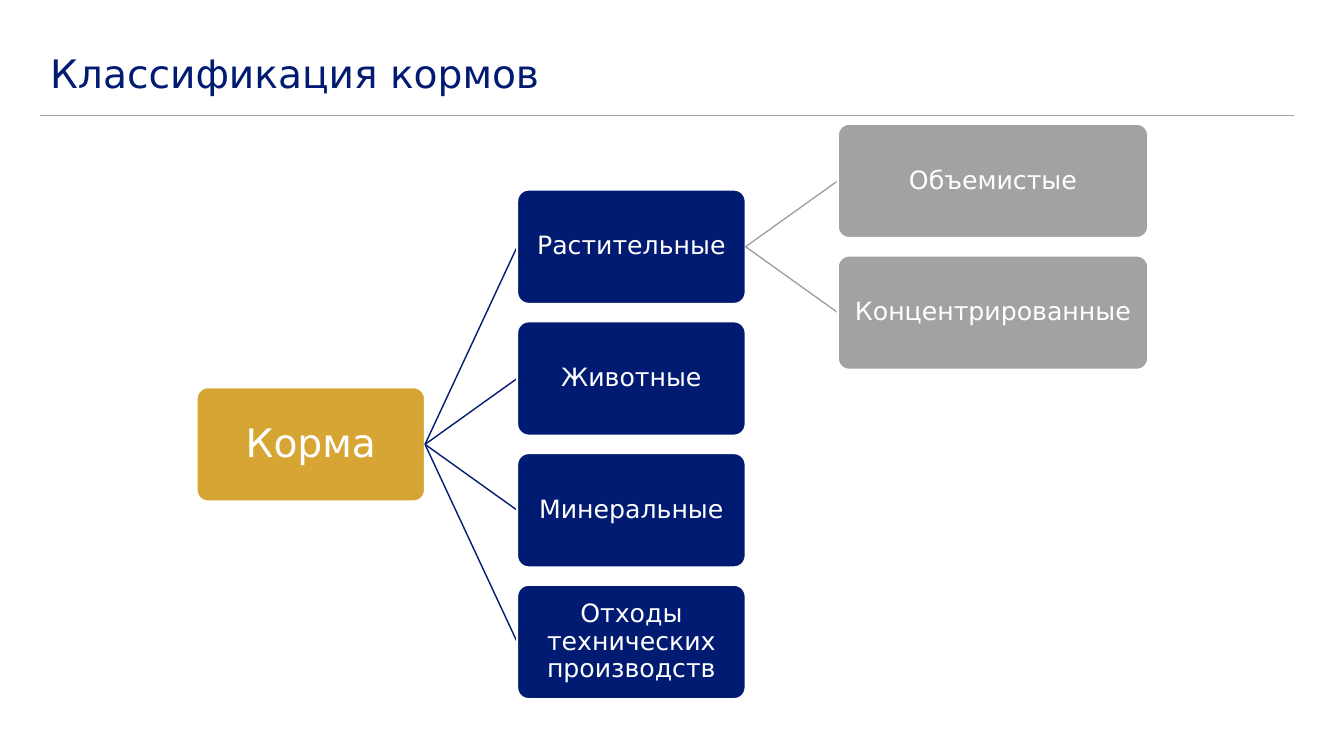
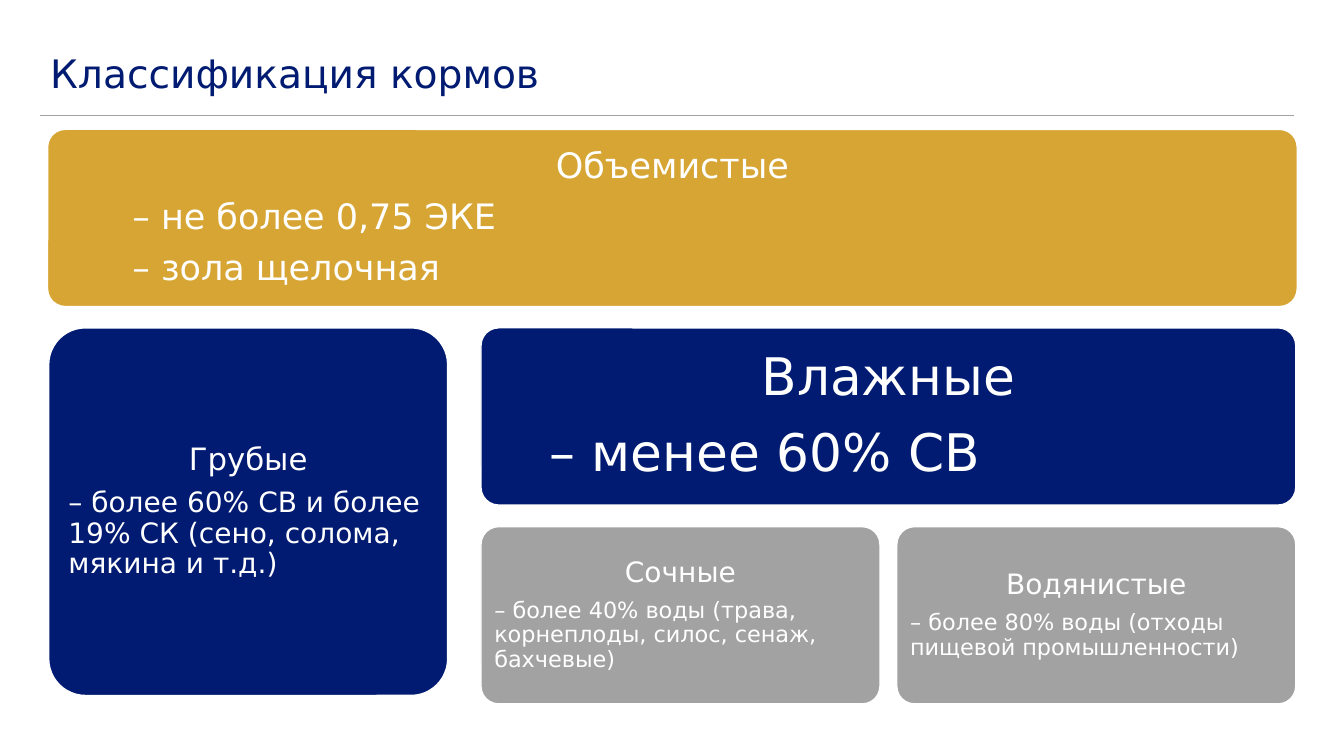
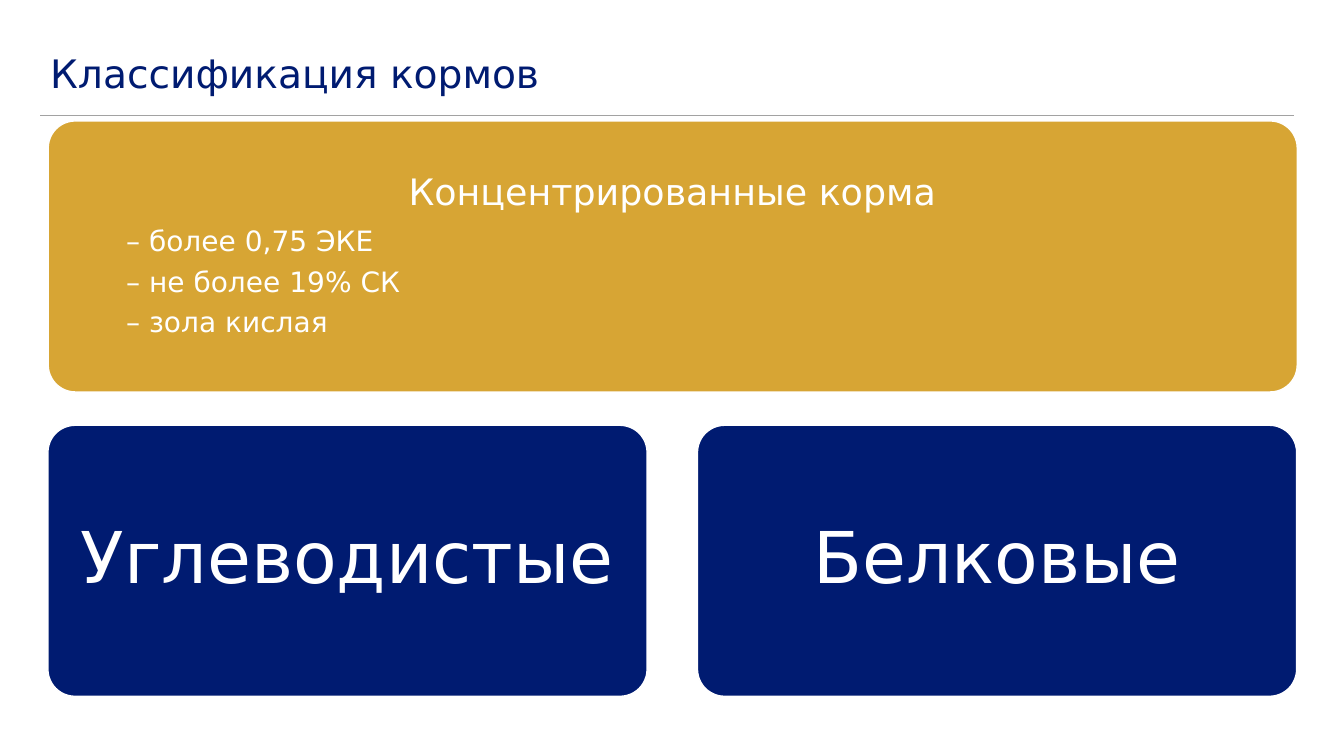
import pptx
import pptx.util
import pptx.dml.color
import pptx.enum.shapes
import pptx.enum.text
import lxml.etree

Pt = pptx.util.Pt
RGB = pptx.dml.color.RGBColor.from_string
ALIGN = pptx.enum.text.PP_ALIGN
MIDDLE = pptx.enum.text.MSO_ANCHOR.MIDDLE
FONT = "DejaVu Sans"
HUES = {"navy": "001B71", "gold": "D7A534", "gray": "A2A2A2", "white": "FFFFFF"}
ROUND = 0.1

deck = pptx.Presentation()
deck.slide_width, deck.slide_height = Pt(960), Pt(540)


def line(slide, start, end, hue, width):
    """Draw a straight line between two points."""
    rule = slide.shapes.add_connector(
        pptx.enum.shapes.MSO_CONNECTOR.STRAIGHT, *map(Pt, start + end))
    rule.line.color.rgb = RGB(HUES[hue])
    rule.line.width = Pt(width)
    lxml.etree.SubElement(rule._element.spPr, pptx.oxml.ns.qn("a:effectLst"))


def box(slide, x, y, w, h, hue, edge, pad, rows):
    """Draw a rounded box; a row is text, size and first-line indent (None: centred)."""
    card = slide.shapes.add_shape(
        pptx.enum.shapes.MSO_SHAPE.ROUNDED_RECTANGLE, Pt(x), Pt(y), Pt(w), Pt(h))
    card.adjustments[0] = ROUND
    card.shadow.inherit = False
    card.fill.solid()
    card.fill.fore_color.rgb = RGB(HUES[hue])
    card.line.color.rgb = RGB(HUES["white"])
    card.line.width = Pt(edge)
    frame = card.text_frame
    frame.word_wrap = True
    frame.vertical_anchor = MIDDLE
    inset = Pt(pad * rows[0][1])
    frame.margin_left = frame.margin_right = inset
    frame.margin_top = frame.margin_bottom = inset
    for i, (text, size, indent) in enumerate(rows):
        para = frame.paragraphs[0] if i == 0 else frame.add_paragraph()
        para.text = text
        para.alignment = ALIGN.CENTER if indent is None else ALIGN.LEFT
        if indent:
            para._p.get_or_add_pPr().set("indent", str(Pt(indent)))
        para.line_spacing = 0.9
        para.space_after = Pt(0.38 * size)
        para.font.name = FONT
        para.font.size = Pt(size)
        para.font.color.rgb = RGB(HUES["white"])


# Shared title and rule
slides = []
for _ in range(3):
    slide = deck.slides.add_slide(deck.slide_layouts[6])
    line(slide, (28.8, 82.4), (924.5, 82.4), "gray", 0.75)
    frame = slide.shapes.add_textbox(Pt(28.8), Pt(32.4), Pt(895.7), Pt(43.2)).text_frame
    frame.word_wrap = True
    frame.vertical_anchor = MIDDLE
    para = frame.paragraphs[0]
    para.text = "Классификация кормов"
    para.line_spacing = 0.9
    para.font.name = FONT
    para.font.size = Pt(28)
    para.font.color.rgb = RGB(HUES["navy"])
    slides.append(slide)
tree, bulky, dense = slides

# Slide 1: tree; row is in steps from the top, parent is an index in the list
LEFT, TOP, WIDE, HIGH = 140.4, 88.4, 163.2, 81.6
STEP_X, STEP_Y = 229, 94.1
nodes = [
    ("Корма", 0, 2, None),
    ("Растительные", 1, 0.5, 0),
    ("Животные", 1, 1.5, 0),
    ("Минеральные", 1, 2.5, 0),
    ("Отходы технических производств", 1, 3.5, 0),
    ("Объемистые", 2, 0, 1),
    ("Концентрированные", 2, 1, 1),
]
levels = [("gold", 28, WIDE), ("navy", 18, WIDE), ("gray", 18, 221.8)]
for text, col, row, parent in nodes:
    hue, size, width = levels[col]
    x, y = LEFT + col * STEP_X, TOP + row * STEP_Y
    if parent is not None:
        start = (x - STEP_X + WIDE, TOP + nodes[parent][2] * STEP_Y + HIGH / 2)
        line(tree, start, (x, y + HIGH / 2), hue, 1)
    box(tree, x, y, width, HIGH, hue, 1.5, 0.05, [(text, size, None)])

# Slides 2 and 3: tiles
tiles = [
    (bulky, 34, 92.4, 892.6, 126.6, "gold", [
        ("Объемистые", 25, None),
        ("– не более 0,75 ЭКЕ", 25, 49.7),
        ("– зола щелочная", 25, 49.7)]),
    (bulky, 34.8, 234.2, 285, 262.6, "navy", [
        ("Грубые", 22, None),
        ("– более 60% СВ и более 19% СК (сено, солома, мякина и т.д.)", 20, 0)]),
    (bulky, 343.6, 234.2, 582, 126.6, "navy", [
        ("Влажные", 37, None),
        ("– менее 60% СВ", 37, 34.6)]),
    (bulky, 343.6, 376.2, 285, 126.6, "gray", [
        ("Сочные", 20, None),
        ("– более 40% воды (трава, корнеплоды, силос, сенаж, бахчевые)", 16, 0)]),
    (bulky, 640.6, 376.2, 285, 126.6, "gray", [
        ("Водянистые", 20, None),
        ("– более 80% воды (отходы пищевой промышленности)", 16, 0)]),
    (dense, 34.4, 86.4, 892.2, 193.6, "gold", [
        ("Концентрированные корма", 26, None),
        ("– более 0,75 ЭКЕ", 20, 42.5),
        ("– не более 19% СК", 20, 42.5),
        ("– зола кислая", 20, 42.5)]),
    (dense, 34.2, 303.8, 428, 193.6, "navy", [("Углеводистые", 51, None)]),
    (dense, 498.2, 303.8, 428, 193.6, "navy", [("Белковые", 51, None)]),
]
for slide, x, y, w, h, hue, rows in tiles:
    box(slide, x, y, w, h, hue, 1, 0.29, rows)

deck.save("out.pptx")
